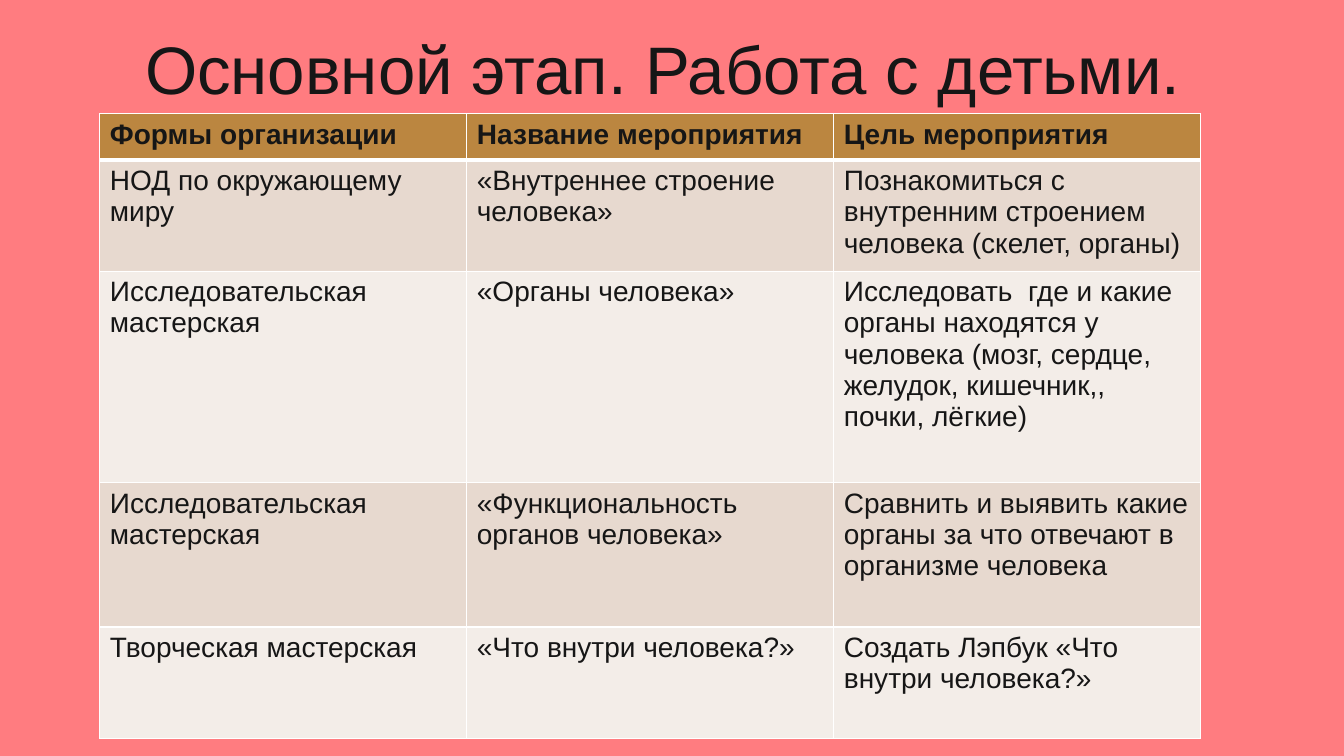
from lxml.etree import SubElement
from pptx import Presentation
from pptx.dml.color import RGBColor
from pptx.enum.text import MSO_ANCHOR
from pptx.oxml.ns import qn
from pptx.util import Inches, Pt

BACKGROUND, TEXT, BORDER = "FF7C80", "161616", "FFFFFF"
HEADER_FILL, BAND_FILLS = "BB8640", ("E7D9CF", "F3EDE8")

ROW_HEIGHTS = (0.46, 1.1, 2.1, 1.43, 1.11)
ROWS = (
    ("Формы организации", "Название мероприятия", "Цель мероприятия"),
    ("НОД по окружающему миру", "«Внутреннее строение человека»",
     "Познакомиться с внутренним строением человека (скелет, органы)"),
    ("Исследовательская мастерская", "«Органы человека»",
     "Исследовать  где и какие органы находятся у человека "
     "(мозг, сердце, желудок, кишечник,, почки, лёгкие)"),
    ("Исследовательская мастерская", "«Функциональность органов человека»",
     "Сравнить и выявить какие органы за что отвечают в организме человека"),
    ("Творческая мастерская", "«Что внутри человека?»",
     "Создать Лэпбук «Что внутри человека?»"),
)


def color(value):
    return RGBColor.from_string(value)


def write(frame, text, size, bold=False):
    frame.word_wrap = True
    run = frame.paragraphs[0].add_run()
    run.text = text
    font_format = {"name": "Arial", "size": Pt(size), "bold": bold}
    for name, value in font_format.items():
        setattr(run.font, name, value)
    run.font.color.rgb = color(TEXT)


def set_borders(cell, widths):
    properties = cell._tc.get_or_add_tcPr()
    for side, width in widths.items():
        line = SubElement(properties, qn(f"a:ln{side}"), w=str(Pt(width)))
        fill = SubElement(line, qn("a:solidFill"))
        SubElement(fill, qn("a:srgbClr"), val=BORDER)


def add_title(slide, left, top, width, height):
    box = slide.shapes.add_textbox(*map(Inches, (left, top, width, height)))
    write(box.text_frame, "Основной этап. Работа с детьми.", 48)


def add_events_table(slide, left, top, width):
    columns = len(ROWS[0])
    frame = slide.shapes.add_table(
        len(ROWS), columns,
        *map(Inches, (left, top, width, sum(ROW_HEIGHTS))))
    table = frame.table
    for column in table.columns:
        column.width = Inches(width / columns)

    for row_index, (texts, height) in enumerate(zip(ROWS, ROW_HEIGHTS)):
        table.rows[row_index].height = Inches(height)
        header = row_index == 0
        fill = HEADER_FILL if header else BAND_FILLS[(row_index - 1) % 2]
        # The line under the header is thicker than the rest
        widths = {"L": 1, "R": 1, "T": 3 if row_index == 1 else 1,
                  "B": 3 if header else 1}
        for column_index, text in enumerate(texts):
            cell = table.cell(row_index, column_index)
            cell.vertical_anchor = MSO_ANCHOR.TOP
            set_borders(cell, widths)
            cell.fill.solid()
            cell.fill.fore_color.rgb = color(fill)
            write(cell.text_frame, text, 20, bold=header)


def main():
    presentation = Presentation()
    presentation.slide_width = Inches(13.33)
    presentation.slide_height = Inches(7.5)
    slide = presentation.slides.add_slide(presentation.slide_layouts[6])
    slide.background.fill.solid()
    slide.background.fill.fore_color.rgb = color(BACKGROUND)

    add_title(slide, 1.34, 0.22, 11.36, 0.91)
    add_events_table(slide, 0.99, 1.13, 10.92)
    presentation.save("out.pptx")


if __name__ == "__main__":
    main()
